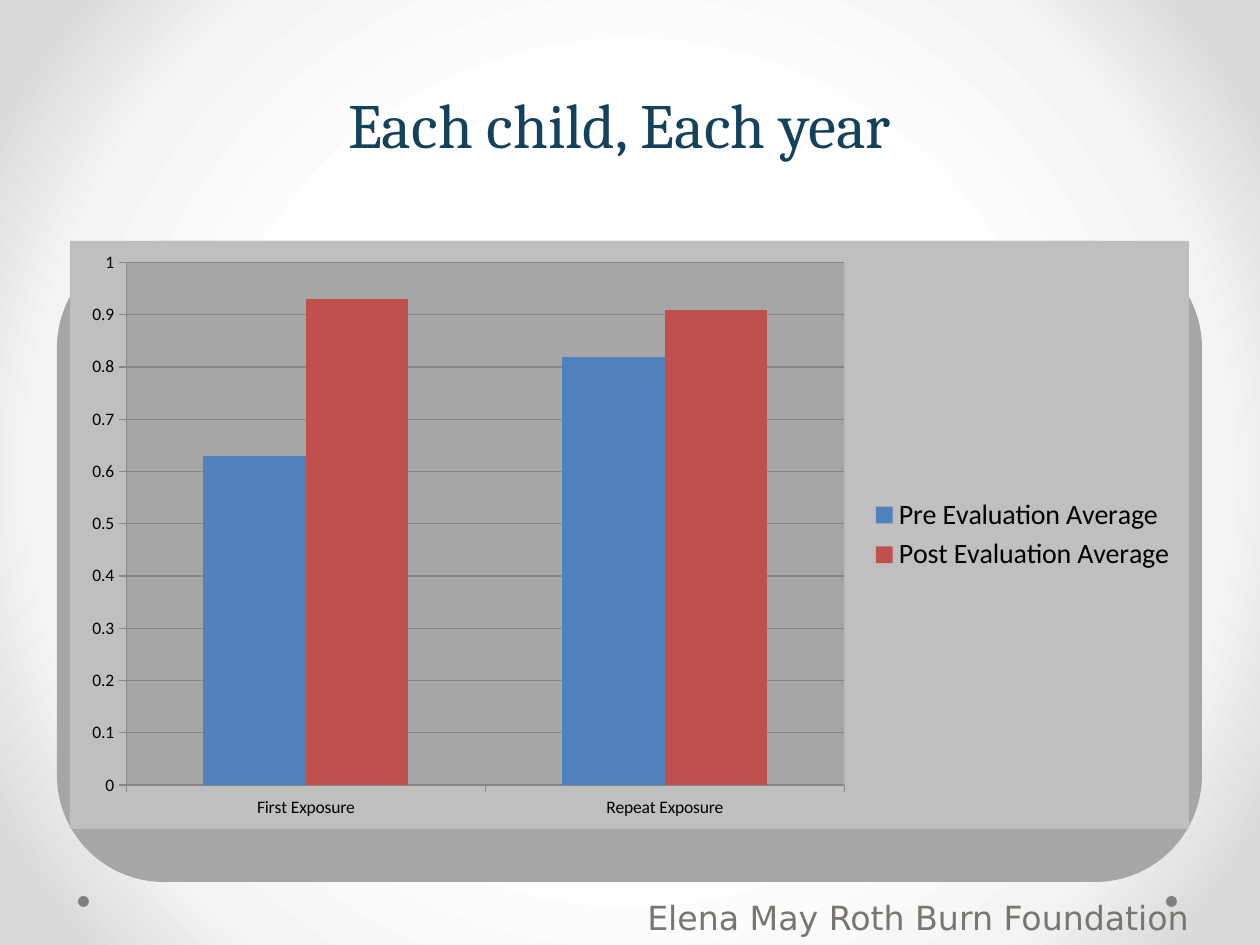
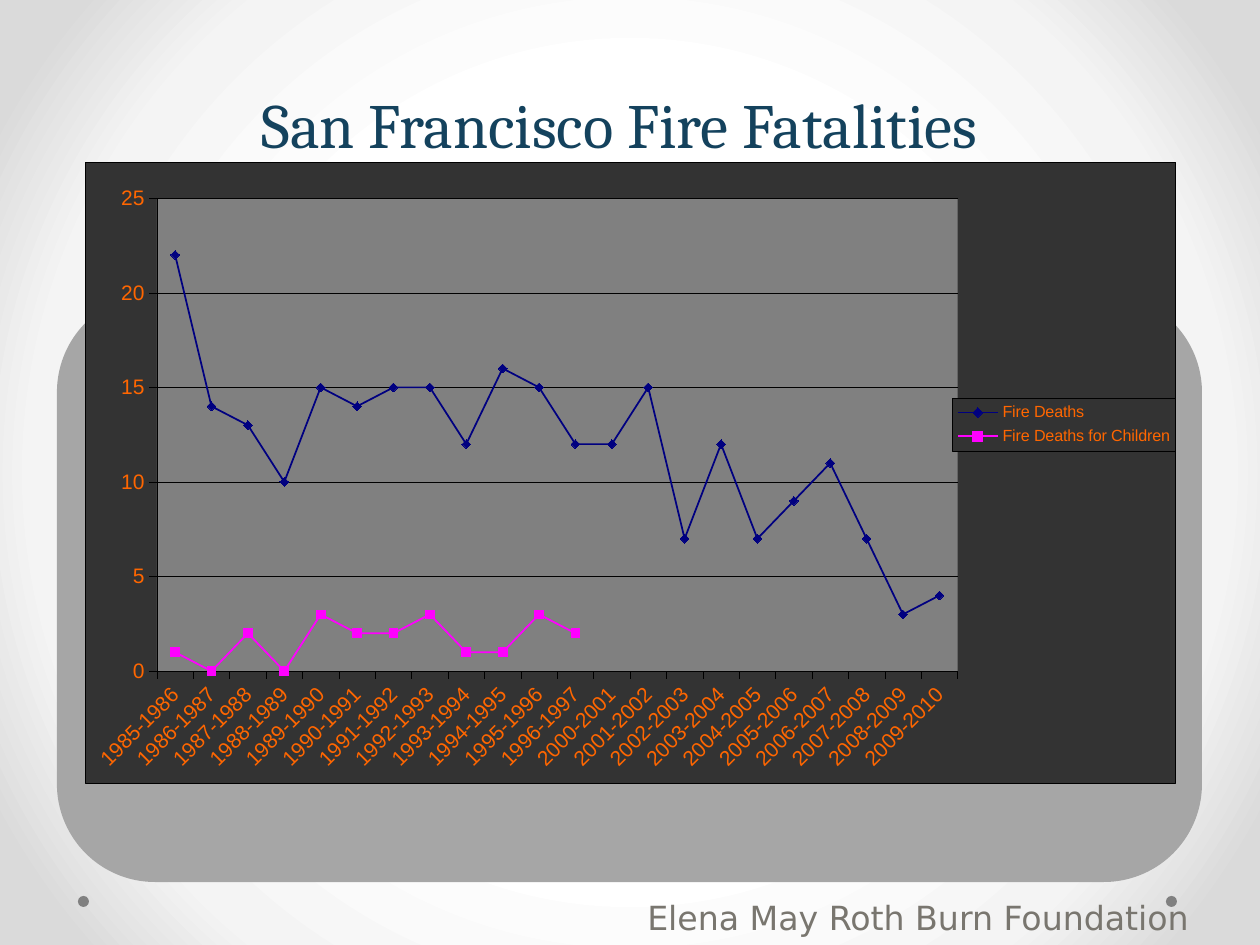
from dataclasses import dataclass
from typing import Optional

from pptx import Presentation
from pptx.chart.data import CategoryChartData
from pptx.dml.color import RGBColor
from pptx.enum.chart import XL_CHART_TYPE, XL_LEGEND_POSITION, XL_MARKER_STYLE, XL_TICK_MARK
from pptx.enum.shapes import MSO_SHAPE
from pptx.enum.text import MSO_ANCHOR, PP_ALIGN
from pptx.oxml import parse_xml
from pptx.oxml.ns import nsdecls, qn
from pptx.util import Emu, Pt

SCALE = 914400 / 126


@dataclass(frozen=True)
class Theme:
    title: str = "14425D"
    foot: str = "79766F"
    dot: str = "808080"
    panel: str = "A6A6A6"
    glow: tuple = ((50, "FFFFFF"), (76, "F4F4F4"), (92, "DADADA"))
    head_font: str = "Cambria"
    foot_font: str = "DejaVu Sans"
    head_size: float = 36
    foot_size: float = 19


@dataclass(frozen=True)
class Box:
    x: int
    y: int
    w: int
    h: int

    def emu(self) -> tuple:
        return tuple(px(n) for n in (self.x, self.y, self.w, self.h))


@dataclass(frozen=True)
class Row:
    name: str
    vals: tuple
    color: str
    mark: Optional[XL_MARKER_STYLE] = None


@dataclass(frozen=True)
class Look:
    font: str
    ink: str
    tick: float
    key: float
    fill: str
    plot: str
    rule: str
    width: float
    border: Optional[str] = None


@dataclass(frozen=True)
class Graph:
    kind: XL_CHART_TYPE
    box: Box
    cats: tuple
    rows: tuple
    look: Look
    top: float
    step: float
    turn: int = 0
    plot: tuple = ()
    key: tuple = ()


@dataclass(frozen=True)
class Page:
    title: str
    panel: Box
    graph: Graph


THEME = Theme()
FOOT = "Elena May Roth Burn Foundation"
HEAD_BOX = Box(84, 73, 1071, 168)
FOOT_BOX = Box(598, 902, 604, 43)
DOTS = (Box(1166, 896, 11, 11), Box(78, 896, 11, 11))
YEARS = tuple(f"{y}-{y + 1}" for y in (*range(1985, 1997), *range(2000, 2010)))

PAGES = (
    Page(
        "Each child, Each year",
        Box(57, 241, 1145, 641),
        Graph(
            XL_CHART_TYPE.COLUMN_CLUSTERED,
            Box(70, 241, 1119, 588),
            ("First Exposure", "Repeat Exposure"),
            (
                Row("Pre Evaluation Average", (0.63, 0.82), "4F81BD"),
                Row("Post Evaluation Average", (0.93, 0.91), "C0504D"),
            ),
            Look("Calibri", "000000", 10, 16, "BFBFBF", "A6A6A6", "868686", 0.75),
            top=1,
            step=0.1,
        ),
    ),
    Page(
        "San Francisco Fire Fatalities",
        Box(57, 294, 1145, 588),
        Graph(
            XL_CHART_TYPE.LINE_MARKERS,
            Box(85, 162, 1091, 621),
            YEARS,
            (
                Row("Fire Deaths",
                    (22, 14, 13, 10, 15, 14, 15, 15, 12, 16, 15,
                     12, 12, 15, 7, 12, 7, 9, 11, 7, 3, 4),
                    "000080", XL_MARKER_STYLE.DIAMOND),
                Row("Fire Deaths for Children",
                    (1, 0, 2, 0, 3, 2, 2, 3, 1, 1, 3, 2),
                    "FF00FF", XL_MARKER_STYLE.SQUARE),
            ),
            Look("Arial", "FF6600", 12, 9.2, "333333", "808080", "000000", 0.25, "000000"),
            top=25,
            step=5,
            turn=-45,
            plot=(0.01, 0.04, 0.79, 0.94),
            key=(0.795, 0.38, 0.205, 0.085),
        ),
    ),
)


def px(n: int) -> Emu:
    return Emu(round(n * SCALE))


def rgb(code: str) -> RGBColor:
    return RGBColor.from_string(code)


def style(font, name: str, size: float, color: str) -> None:
    font.name, font.size = name, Pt(size)
    font.color.rgb = rgb(color)


def paint(fill, color: str) -> None:
    fill.solid()
    fill.fore_color.rgb = rgb(color)


def stroke(line, color: str, width: float) -> None:
    line.color.rgb = rgb(color)
    line.width = Pt(width)


def glow(master) -> None:
    stops = "".join(
        f'<a:gs pos="{at * 1000}"><a:srgbClr val="{color}"/></a:gs>' for at, color in THEME.glow
    )
    base = master.element.find(qn("p:cSld"))
    old = base.find(qn("p:bg"))
    if old is not None:
        base.remove(old)
    base.insert(0, parse_xml(
        f'<p:bg {nsdecls("p", "a")}><p:bgPr><a:gradFill><a:gsLst>{stops}</a:gsLst>'
        '<a:path path="circle"><a:fillToRect l="50000" t="50000" r="50000" b="50000"/></a:path>'
        "</a:gradFill><a:effectLst/></p:bgPr></p:bg>"
    ))


def shape(slide, kind: MSO_SHAPE, box: Box, color: str):
    item = slide.shapes.add_shape(kind, *box.emu())
    item.shadow.inherit = False
    paint(item.fill, color)
    item.line.fill.background()
    return item


def head(slide, text: str) -> None:
    item = slide.shapes.title
    item.left, item.top, item.width, item.height = HEAD_BOX.emu()
    frame = item.text_frame
    frame.text = text
    frame.vertical_anchor = MSO_ANCHOR.BOTTOM
    frame.margin_bottom = px(80)
    para = frame.paragraphs[0]
    para.alignment = PP_ALIGN.CENTER
    style(para.runs[0].font, THEME.head_font, THEME.head_size, THEME.title)


def foot(slide) -> None:
    frame = slide.shapes.add_textbox(*FOOT_BOX.emu()).text_frame
    frame.word_wrap = True
    frame.margin_left, frame.margin_top = px(25), 0
    frame.margin_right, frame.margin_bottom = px(13), px(6)
    frame.text = FOOT
    para = frame.paragraphs[0]
    para.alignment, para.line_spacing = PP_ALIGN.RIGHT, 0.9
    style(para.runs[0].font, THEME.foot_font, THEME.foot_size, THEME.foot)


def area(color: str, look: Look, edge: Optional[str] = None):
    line = f'<a:solidFill><a:srgbClr val="{edge}"/></a:solidFill>' if edge else "<a:noFill/>"
    return parse_xml(
        f'<c:spPr {nsdecls("c", "a")}><a:solidFill><a:srgbClr val="{color}"/></a:solidFill>'
        f'<a:ln w="{Pt(look.width)}">{line}</a:ln></c:spPr>'
    )


def place(node, spot: int, rect: tuple, outer: bool = False) -> None:
    for old in node.findall(qn("c:layout")):
        node.remove(old)
    aim = '<c:layoutTarget val="outer"/>' if outer else ""
    size = "".join(f'<c:{k} val="{v}"/>' for k, v in zip("xywh", rect))
    node.insert(spot, parse_xml(
        f'<c:layout {nsdecls("c")}><c:manualLayout>{aim}<c:xMode val="edge"/>'
        f'<c:yMode val="edge"/>{size}</c:manualLayout></c:layout>'
    ))


def axes(chart, graph: Graph) -> None:
    look = graph.look
    for axis in (chart.category_axis, chart.value_axis):
        axis.major_tick_mark = XL_TICK_MARK.OUTSIDE
        axis.minor_tick_mark = XL_TICK_MARK.NONE
        style(axis.tick_labels.font, look.font, look.tick, look.ink)
        stroke(axis.format.line, look.rule, look.width)
    if graph.turn:
        for body in chart.element.xpath(".//c:catAx/c:txPr/a:bodyPr"):
            body.set("rot", str(graph.turn * 60000))
    axis = chart.value_axis
    axis.minimum_scale, axis.maximum_scale = 0, graph.top
    axis.major_unit = graph.step
    axis.has_major_gridlines = True
    stroke(axis.major_gridlines.format.line, look.rule, look.width)


def series(chart, graph: Graph) -> None:
    plot = chart.plots[0]
    plot.vary_by_categories = False
    if graph.kind == XL_CHART_TYPE.COLUMN_CLUSTERED:
        plot.gap_width, plot.overlap = 150, 0
    for item, row in zip(plot.series, graph.rows):
        if row.mark is None:
            paint(item.format.fill, row.color)
            continue
        item.smooth = False
        stroke(item.format.line, row.color, 1)
        mark = item.marker
        mark.style, mark.size = row.mark, 5
        paint(mark.format.fill, row.color)
        stroke(mark.format.line, row.color, 1)


def draw(slide, graph: Graph) -> None:
    data, look = CategoryChartData(), graph.look
    data.categories = graph.cats
    for row in graph.rows:
        gap = (None,) * (len(graph.cats) - len(row.vals))
        data.add_series(row.name, row.vals + gap)
    chart = slide.shapes.add_chart(graph.kind, *graph.box.emu(), data).chart
    chart.has_title = False
    style(chart.font, look.font, look.tick, "000000")
    axes(chart, graph)
    series(chart, graph)
    chart.has_legend = True
    chart.legend.position = XL_LEGEND_POSITION.RIGHT
    chart.legend.include_in_layout = False
    style(chart.legend.font, look.font, look.key, look.ink)

    root = chart.element
    root.find(qn("c:chart")).addnext(area(look.fill, look, look.border))
    plot = root.xpath("c:chart/c:plotArea")[0]
    plot.append(area(look.plot, look))
    key = root.xpath("c:chart/c:legend")[0]
    key.find(qn("c:overlay")).addnext(area(look.fill, look, look.border))
    if graph.plot:
        place(plot, 0, graph.plot, outer=True)
    if graph.key:
        place(key, 1, graph.key)


def build(deck, page: Page) -> None:
    slide = deck.slides.add_slide(deck.slide_layouts.get_by_name("Title Only"))
    for dot in DOTS:
        shape(slide, MSO_SHAPE.OVAL, dot, THEME.dot)
    head(slide, page.title)
    foot(slide)
    shape(slide, MSO_SHAPE.ROUNDED_RECTANGLE, page.panel, THEME.panel)
    draw(slide, page.graph)


def main() -> None:
    deck = Presentation()
    deck.slide_width, deck.slide_height = px(1260), px(945)
    glow(deck.slide_master)
    for page in PAGES:
        build(deck, page)
    deck.save("out.pptx")


if __name__ == "__main__":
    main()
